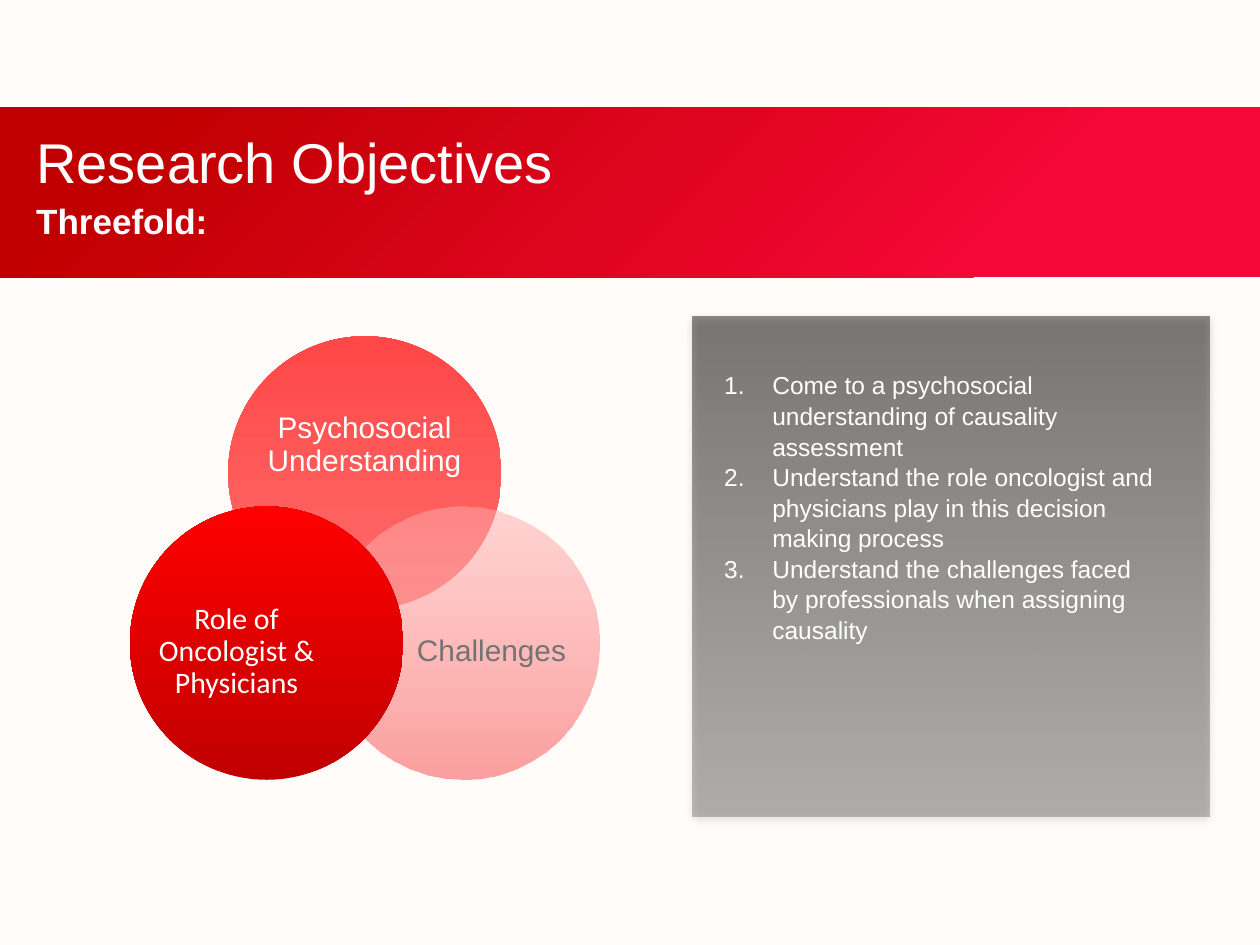
"""Build the Research Objectives slide with three overlapping circles and a numbered list."""
from dataclasses import dataclass

from lxml.etree import SubElement
from pptx import Presentation
from pptx.dml.color import RGBColor
from pptx.enum.shapes import MSO_SHAPE
from pptx.enum.text import MSO_ANCHOR, MSO_AUTO_SIZE, PP_ALIGN
from pptx.oxml import parse_xml
from pptx.oxml.ns import nsdecls, qn
from pptx.util import Cm, Pt


@dataclass(frozen=True)
class Theme:
    background: str = "FFFCF9"
    light: str = "FFFFFF"
    muted: str = "737373"
    band: tuple = ((11, "F50736", 100), (20, "F50736", 100), (89, "C00000", 100))
    panel: tuple = ((0, "171717", 49), (100, "3A3A3A", 31))
    coral: tuple = ((0, "FF6D6D", 100), (100, "FF4747", 100))
    pink: tuple = ((0, "FB9393", 88), (100, "FFABAB", 50))
    red: tuple = ((0, "C00000", 100), (100, "FF0000", 100))
    font: str = "Arial"
    alternate_font: str = "Calibri"
    title_size: int = 32
    subtitle_size: int = 20
    label_size: int = 17
    list_size: int = 14


theme = Theme()


def add_gradient_shape(preset, box, stops, angle):
    shape = slide.shapes.add_shape(preset, *map(Cm, box))
    shape.shadow.inherit = False
    shape.line.fill.background()
    shape.fill.background()
    stop_xml = "".join(
        f'<a:gs pos="{position * 1000}"><a:srgbClr val="{color}">'
        f'<a:alpha val="{opacity * 1000}"/></a:srgbClr></a:gs>'
        for position, color, opacity in stops
    )
    gradient = parse_xml(
        f'<a:gradFill {nsdecls("a")} rotWithShape="1"><a:gsLst>{stop_xml}</a:gsLst>'
        f'<a:lin ang="{angle * 60000}" scaled="0"/></a:gradFill>'
    )
    properties = shape._element.spPr
    properties.replace(properties.find(qn("a:noFill")), gradient)
    return shape


def add_run(paragraph, text, size, color=theme.light, font=theme.font, bold=False):
    run = paragraph.add_run()
    run.text = text
    run.font.size = Pt(size)
    run.font.name = font
    run.font.bold = bold
    run.font.color.rgb = RGBColor.from_string(color)


presentation = Presentation()
presentation.slide_width, presentation.slide_height = Cm(25.4), Cm(19.05)
slide = presentation.slides.add_slide(presentation.slide_layouts[5])
slide.background.fill.solid()
slide.background.fill.fore_color.rgb = RGBColor.from_string(theme.background)

add_gradient_shape(MSO_SHAPE.RECTANGLE, (0, 2.16, 25.4, 3.43), theme.band, 225)
panel = add_gradient_shape(MSO_SHAPE.RECTANGLE, (13.97, 6.38, 10.41, 10.08), theme.panel, 90)
panel_shadow = SubElement(
    panel._element.spPr.find(qn("a:effectLst")), qn("a:outerShdw"),
    blurRad=str(Pt(5)), dist=str(Pt(1.8)), dir="5400000", rotWithShape="0",
)
shadow_color = SubElement(panel_shadow, qn("a:srgbClr"), val="000000")
SubElement(shadow_color, qn("a:alpha"), val="35000")

objectives = (
    "Come to a psychosocial understanding of causality assessment",
    "Understand the role oncologist and physicians play in this decision making process",
    "Understand the challenges faced by professionals when assigning causality",
)
objective_list = slide.shapes.add_textbox(Cm(14.35), Cm(7.32), Cm(9.27), Cm(6.25)).text_frame
objective_list.word_wrap = True
for index, objective in enumerate(objectives):
    item = objective_list.add_paragraph() if index else objective_list.paragraphs[0]
    item.line_spacing = 1.04
    item_properties = item._p.get_or_add_pPr()
    item_properties.set("marL", str(Cm(0.97)))
    item_properties.set("indent", str(Cm(-0.97)))
    SubElement(item_properties, qn("a:buFont"), typeface="+mj-lt")
    SubElement(item_properties, qn("a:buAutoNum"), type="arabicPeriod")
    add_run(item, objective, theme.list_size)

title = slide.shapes.title
slide.shapes._spTree.append(title._element)
title.left, title.top, title.width, title.height = Cm(0.48), Cm(2.31), Cm(12.73), Cm(1.57)
title.text_frame.auto_size = MSO_AUTO_SIZE.NONE
title.text_frame.vertical_anchor = MSO_ANCHOR.TOP
title.text_frame.margin_top = Cm(0.26)
title.text_frame.paragraphs[0].alignment = PP_ALIGN.LEFT
add_run(title.text_frame.paragraphs[0], "Research Objectives", theme.title_size)

subtitle = slide.shapes.add_textbox(Cm(0.48), Cm(4.01), Cm(18.03), Cm(0.99)).text_frame
subtitle.word_wrap = True
subtitle.vertical_anchor = MSO_ANCHOR.BOTTOM
add_run(subtitle.paragraphs[0], "Threefold:", theme.subtitle_size, bold=True)

diameter = 5.51
upper_label, lower_label = (4.04, 2.46), (3.3, 3.02)
circles = (
    ("Psychosocial Understanding", (4.6, 6.78), theme.coral,
     (5.33, 7.75, *upper_label), theme.light, theme.font),
    ("Challenges", (6.58, 10.21), theme.pink,
     (8.26, 11.63, *lower_label), theme.muted, theme.font),
    ("Role of Oncologist & Physicians", (2.62, 10.21), theme.red,
     (3.12, 11.63, *lower_label), theme.light, theme.alternate_font),
)
for topic, corner, stops, label_box, color, font in circles:
    add_gradient_shape(MSO_SHAPE.OVAL, (*corner, diameter, diameter), stops, 270)
    label = slide.shapes.add_textbox(*map(Cm, label_box)).text_frame
    label.word_wrap = True
    label.vertical_anchor = MSO_ANCHOR.MIDDLE
    label.margin_left = label.margin_right = label.margin_top = label.margin_bottom = 0
    label.paragraphs[0].alignment = PP_ALIGN.CENTER
    label.paragraphs[0].line_spacing = 0.9
    add_run(label.paragraphs[0], topic, theme.label_size, color, font)

presentation.save("out.pptx")
